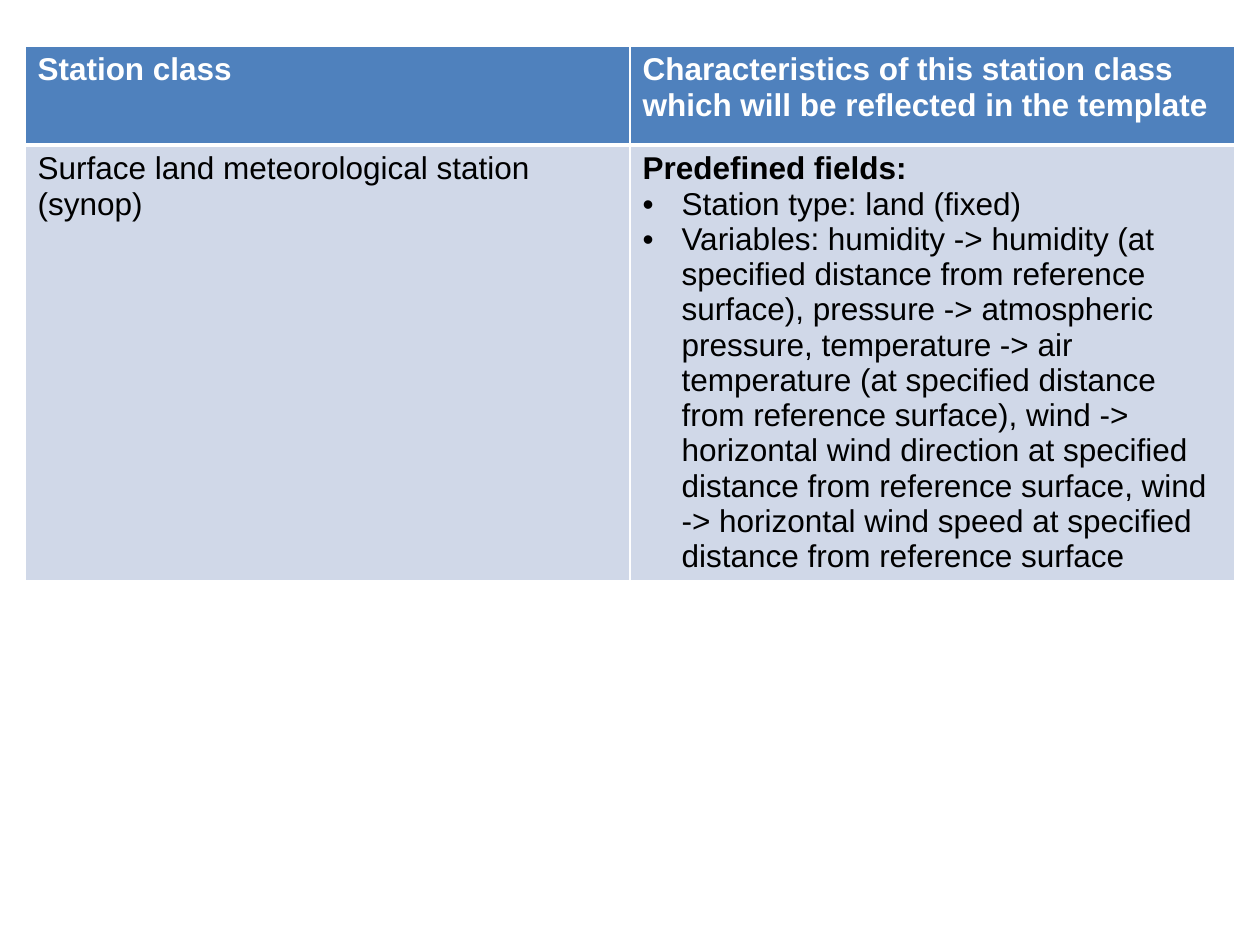
import pptx
import pptx.dml.color
import pptx.oxml
import pptx.oxml.ns
import pptx.util

EMU_PER_PX = 914400 / 126
BULLET_INDENT = 39
BLANK_LAYOUT = 6

HEADERS = [
    "Station class",
    "Characteristics of this station class which will be reflected in the template",
]
STATION = "Surface land meteorological station (synop)"
FIELDS_HEADING = "Predefined fields:"
FIELDS = [
    "Station type: land (fixed)",
    "Variables: humidity -> humidity (at specified distance from reference surface), "
    "pressure -> atmospheric pressure, temperature -> air temperature (at specified "
    "distance from reference surface), wind -> horizontal wind direction at specified "
    "distance from reference surface, wind -> horizontal wind speed at specified "
    "distance from reference surface",
]


def px(length):
    return pptx.util.Emu(round(length * EMU_PER_PX))


def color(value):
    return pptx.dml.color.RGBColor.from_string(value)


class StationSlide:
    font = {"name": "Arial", "size": pptx.util.Pt(18)}
    header = {"fill": "4F81BD", "text": "FFFFFF", "borders": {"L": 1, "R": 1, "T": 1, "B": 3}}
    body = {"fill": "D0D8E8", "text": "000000", "borders": {"L": 1, "R": 1, "T": 3, "B": 1}}
    border_color = "FFFFFF"

    def __init__(self, presentation):
        layout = presentation.slide_layouts[BLANK_LAYOUT]
        self.slide = presentation.slides.add_slide(layout)

    def table(self, left, top, column_widths, row_heights):
        frame = self.slide.shapes.add_table(
            len(row_heights), len(column_widths), px(left), px(top),
            px(sum(column_widths)), px(sum(row_heights)))
        for column, width in zip(frame.table.columns, column_widths):
            column.width = px(width)
        for row, height in zip(frame.table.rows, row_heights):
            row.height = px(height)
        return frame.table

    def cell(self, cell, style, paragraphs):
        """Fill a cell from (text, bold, bulleted) triples."""
        self.borders(cell, style["borders"])
        cell.fill.solid()
        cell.fill.fore_color.rgb = color(style["fill"])
        for index, (text, bold, bulleted) in enumerate(paragraphs):
            frame = cell.text_frame
            paragraph = frame.add_paragraph() if index else frame.paragraphs[0]
            if bulleted:
                self.bullet(paragraph)
            run = paragraph.add_run()
            run.text = text
            for name, value in {**self.font, "bold": bold}.items():
                setattr(run.font, name, value)
            run.font.color.rgb = color(style["text"])

    def borders(self, cell, widths):
        properties = cell._tc.get_or_add_tcPr()
        for side, width in widths.items():
            properties.append(pptx.oxml.parse_xml(
                f'<a:ln{side} {pptx.oxml.ns.nsdecls("a")} w="{pptx.util.Pt(width)}">'
                f'<a:solidFill><a:srgbClr val="{self.border_color}"/></a:solidFill>'
                f'</a:ln{side}>'))

    def bullet(self, paragraph):
        properties = paragraph._p.get_or_add_pPr()
        properties.set("marL", str(px(BULLET_INDENT)))
        properties.set("indent", str(px(-BULLET_INDENT)))
        for tag in ('buFont typeface="Arial"', 'buChar char="•"'):
            properties.append(pptx.oxml.parse_xml(
                f'<a:{tag} {pptx.oxml.ns.nsdecls("a")}/>'))


def main():
    presentation = pptx.Presentation()
    presentation.slide_width = px(1260)
    presentation.slide_height = px(945)

    page = StationSlide(presentation)
    table = page.table(25, 46, column_widths=[605, 605], row_heights=[99, 435])
    for column, text in enumerate(HEADERS):
        page.cell(table.cell(0, column), page.header, [(text, True, False)])
    page.cell(table.cell(1, 0), page.body, [(STATION, False, False)])
    page.cell(table.cell(1, 1), page.body,
              [(FIELDS_HEADING, True, False)] + [(text, False, True) for text in FIELDS])

    presentation.save("out.pptx")


if __name__ == "__main__":
    main()
